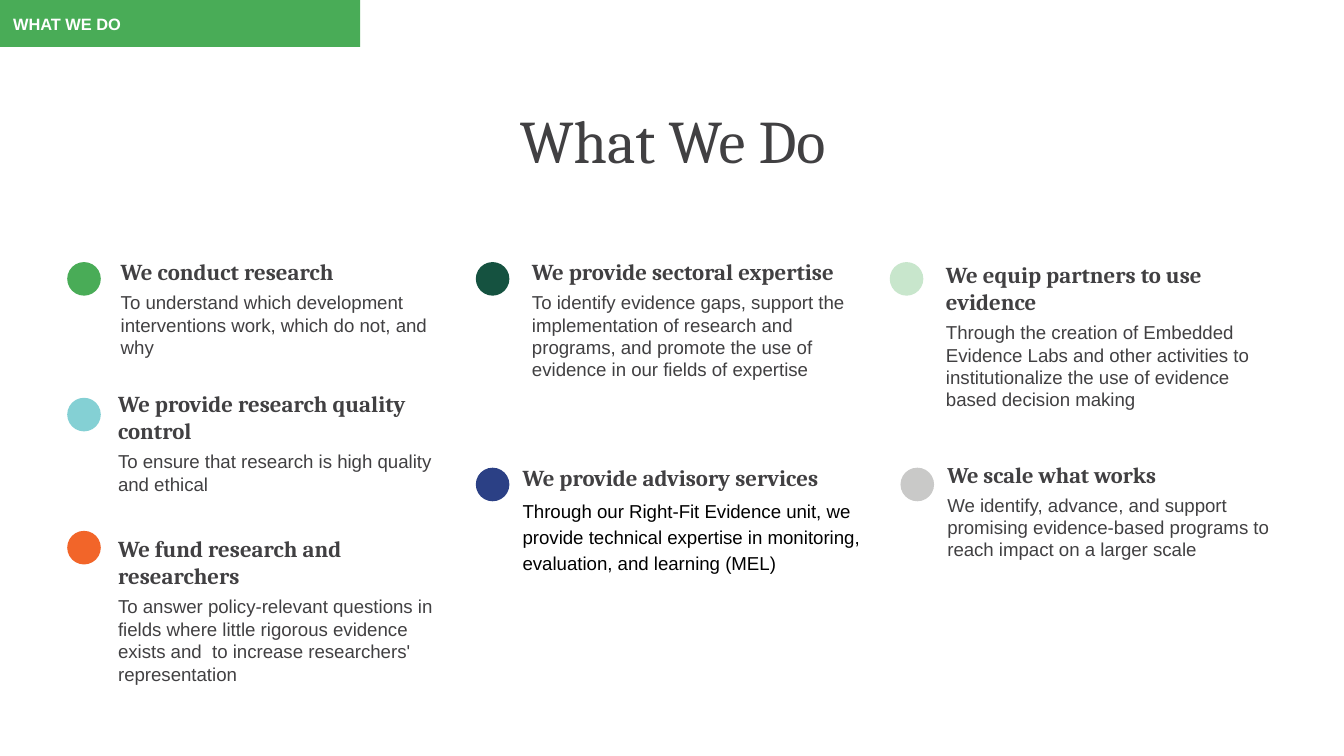
"""Build the What We Do slide: seven activities with coloured markers."""
from dataclasses import dataclass

from pptx import Presentation
from pptx.dml.color import RGBColor
from pptx.enum.shapes import MSO_SHAPE
from pptx.enum.text import MSO_ANCHOR, PP_ALIGN
from pptx.util import Inches, Pt

RECT, OVAL = MSO_SHAPE.RECTANGLE, MSO_SHAPE.OVAL
TOP, MIDDLE = MSO_ANCHOR.TOP, MSO_ANCHOR.MIDDLE
LEFT, CENTER = PP_ALIGN.LEFT, PP_ALIGN.CENTER


@dataclass(frozen=True)
class Theme:
    serif: str = "Cambria"
    sans: str = "Arial"
    ink: str = "414042"
    black: str = "000000"
    white: str = "FFFFFF"
    green: str = "49AC57"
    teal: str = "84D0D4"
    orange: str = "F26529"
    forest: str = "155240"
    navy: str = "2B4085"
    mint: str = "C8E6CC"
    grey: str = "C9C9C8"
    title: float = 32.4
    heading: float = 12.2
    body: float = 10
    tag: float = 8.8


THEME = Theme()
WIDTH = Inches(10)
HEIGHT = WIDTH * 9 // 16
INSET = 0.1
DOT = 0.25


@dataclass(frozen=True)
class Activity:
    dot_x: float
    dot_y: float
    color: str
    x: float
    y: float
    height: float
    heading: str
    body: str
    width: float = 2.68
    heading_size: float = THEME.heading
    body_color: str = THEME.ink
    line_spacing: float = 1.0


ACTIVITIES = (
    Activity(0.5, 1.95, THEME.green, 0.8, 1.82, 1.02, "We conduct research",
             "To understand which development interventions work, which do not, and why"),
    Activity(0.5, 2.96, THEME.teal, 0.78, 2.8, 1.08, "We provide research quality control",
             "To ensure that research is high quality and ethical"),
    Activity(0.5, 3.95, THEME.orange, 0.78, 3.88, 1.62, "We fund research and researchers",
             "To answer policy-relevant questions in fields where little rigorous evidence "
             "exists and  to increase researchers' representation"),
    Activity(3.54, 1.95, THEME.forest, 3.86, 1.82, 1.31, "We provide sectoral expertise",
             "To identify evidence gaps, support the implementation of research and programs, "
             "and promote the use of evidence in our fields of expertise"),
    Activity(3.54, 3.48, THEME.navy, 3.79, 3.35, 1.44, "We provide advisory services",
             "Through our Right-Fit Evidence unit, we provide technical expertise in "
             "monitoring, evaluation, and learning (MEL)",
             width=2.76, body_color=THEME.black, line_spacing=1.15),
    Activity(6.62, 1.95, THEME.mint, 6.94, 1.84, 1.44, "We equip partners to use evidence",
             "Through the creation of Embedded Evidence Labs and other activities to "
             "institutionalize the use of evidence based decision making"),
    Activity(6.7, 3.48, THEME.grey, 6.95, 3.33, 1.26, "We scale what works",
             "We identify, advance, and support promising evidence-based programs to reach "
             "impact on a larger scale", heading_size=12),
)


def add_filled(s, kind, x: float, y: float, w: float, h: float, color: str):
    """Add a preset shape with a plain fill and no outline."""
    sp = s.shapes.add_shape(kind, Inches(x), Inches(y), Inches(w), Inches(h))
    sp.shadow.inherit = False
    sp.fill.solid()
    sp.fill.fore_color.rgb = RGBColor.from_string(color)
    sp.line.fill.background()
    return sp


def set_frame(sp, anchor=TOP):
    """Set wrapping, insets and anchor, and return the text frame."""
    tf = sp.text_frame
    tf.word_wrap = True
    tf.vertical_anchor = anchor
    tf.margin_left = tf.margin_right = tf.margin_top = tf.margin_bottom = Inches(INSET)
    return tf


def add_text_box(s, x: float, y: float, w: float, h: float):
    """Add a wrapping text box and return its text frame."""
    return set_frame(s.shapes.add_textbox(Inches(x), Inches(y), Inches(w), Inches(h)))


def write(p, text: str, font: str, size: float, color: str,
          bold: bool = False, align=LEFT) -> None:
    """Write one uniformly styled paragraph."""
    p.text = text
    p.alignment = align
    p.font.name = font
    p.font.size = Pt(size)
    p.font.bold = bold
    p.font.color.rgb = RGBColor.from_string(color)


def add_activity(s, a: Activity) -> None:
    """Draw an activity's marker, heading and description."""
    add_filled(s, OVAL, a.dot_x, a.dot_y, DOT, DOT, a.color)
    tf = add_text_box(s, a.x, a.y, a.width, a.height)
    write(tf.paragraphs[0], a.heading, THEME.serif, a.heading_size, THEME.ink, bold=True)
    p = tf.add_paragraph()
    write(p, a.body, THEME.sans, THEME.body, a.body_color)
    p.space_before = Pt(3)
    p.line_spacing = a.line_spacing


def main() -> None:
    """Build and save the slide."""
    prs = Presentation()
    prs.slide_width, prs.slide_height = WIDTH, HEIGHT
    s = prs.slides.add_slide(prs.slide_layouts[6])
    tf = add_text_box(s, 0.63, 0.67, 8.75, 0.63)
    write(tf.paragraphs[0], "What We Do", THEME.serif, THEME.title, THEME.ink, align=CENTER)
    for a in ACTIVITIES:
        add_activity(s, a)
    tag = add_filled(s, RECT, 0, 0, 2.68, 0.35, THEME.green)
    tf = set_frame(tag, MIDDLE)
    write(tf.paragraphs[0], "WHAT WE DO", THEME.sans, THEME.tag, THEME.white, bold=True)
    prs.save("out.pptx")


if __name__ == "__main__":
    main()
